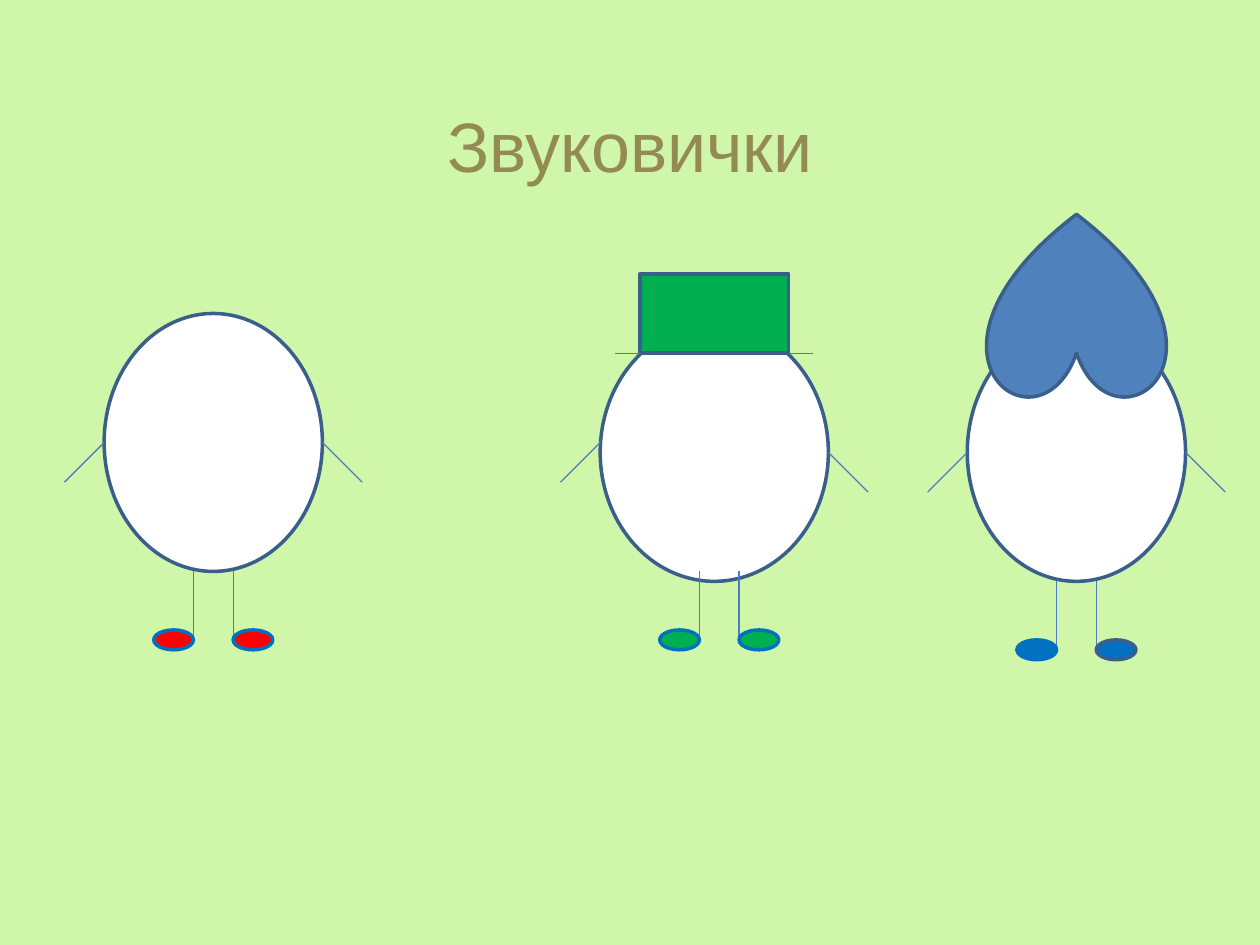
import pptx
import pptx.dml.color
import pptx.enum.shapes
import pptx.enum.text
import pptx.oxml.ns
import pptx.util
from lxml import etree
from pptx.util import Cm

SHAPE = pptx.enum.shapes.MSO_SHAPE
OUTLINE, LIMB = "3A5F8C", "4B7EBC"
WHITE, RED, GREEN, BLUE, HAT_BLUE = "FFFFFF", "FF0000", "00B050", "0070C0", "4F81BD"


def color(hex_text):
    return pptx.dml.color.RGBColor.from_string(hex_text)


def add_solid(page, kind, left, top, width, height, fill, line=OUTLINE):
    shape = page.shapes.add_shape(kind, Cm(left), Cm(top), Cm(width), Cm(height))
    shape.shadow.inherit = False
    shape.fill.solid()
    shape.fill.fore_color.rgb = color(fill)
    shape.line.color.rgb = color(line)
    shape.line.width = pptx.util.Pt(2)
    return shape


def add_limb(page, x1, y1, x2, y2):
    line = page.shapes.add_connector(
        pptx.enum.shapes.MSO_CONNECTOR.STRAIGHT, Cm(x1), Cm(y1), Cm(x2), Cm(y2))
    line.line.color.rgb = color(LIMB)
    line.line.width = pptx.util.Pt(0.75)
    etree.SubElement(line._element.spPr, pptx.oxml.ns.qn("a:effectLst"))


def add_figure(page, left, top, width, height, shoe, shoe_lines=(BLUE, BLUE),
               left_arm_rise=0, leg_rise=0, leg_shift=0):
    """Egg-shaped body with arms, legs and shoes; the box is that of the body."""
    add_solid(page, SHAPE.OVAL, left, top, width, height, WHITE)

    reach = 0.8
    shoulder = top + height / 2
    for side, x, y in ((-1, left, shoulder - left_arm_rise), (1, left + width, shoulder)):
        add_limb(page, x, y, x + side * reach, y + reach)

    shoe_width, shoe_height = 0.8, 0.4
    hip = top + height - leg_rise
    middle = left + width / 2 + leg_shift
    for side, shoe_line in zip((-1, 1), shoe_lines):
        x = middle + side * 0.4
        add_limb(page, x, hip, x, hip + 1.4)
        shoe_left = x - shoe_width if side < 0 else x
        add_solid(page, SHAPE.OVAL, shoe_left, hip + 1.18, shoe_width, shoe_height,
                  shoe, shoe_line)


def add_top_hat(page, left, top, width, height):
    add_solid(page, SHAPE.RECTANGLE, left, top, width, height, GREEN)
    brim, right, bottom = 0.5, left + width, top + height
    add_limb(page, left, bottom, left - brim, bottom)
    add_limb(page, right, bottom, right + brim, bottom)


def add_heart_hat(page, left, top, width, height):
    hat = add_solid(page, SHAPE.HEART, left, top, width, height, HAT_BLUE)
    hat.rotation = 180


def add_title(page, left, top, width, height):
    box = page.shapes.add_textbox(Cm(left), Cm(top), Cm(width), Cm(height))
    frame = box.text_frame
    frame.word_wrap = True
    frame.vertical_anchor = pptx.enum.text.MSO_ANCHOR.MIDDLE
    frame.text = "Звуковички"
    para = frame.paragraphs[0]
    para.alignment = pptx.enum.text.PP_ALIGN.CENTER
    span = para.runs[0]
    span.font.name = "Arial"
    span.font.size = pptx.util.Pt(40)
    span.font.color.rgb = color("948A54")


def main():
    deck = pptx.Presentation()
    deck.slide_width, deck.slide_height = Cm(25.4), Cm(19.05)
    page = deck.slides.add_slide(deck.slide_layouts[6])
    page.background.fill.solid()
    page.background.fill.fore_color.rgb = color("D0F7A9")

    add_figure(page, 2.1, 6.32, 4.4, 5.2, RED)
    add_figure(page, 12.1, 6.52, 4.6, 5.2, GREEN,
               left_arm_rise=0.2, leg_rise=0.2, leg_shift=0.1)
    add_figure(page, 19.5, 6.52, 4.4, 5.2, BLUE, (BLUE, OUTLINE))
    add_top_hat(page, 12.9, 5.52, 3, 1.6)
    add_heart_hat(page, 19.9, 4.32, 3.6, 3.73)
    add_title(page, 0, 1.93, 25.4, 1.96)
    deck.save("out.pptx")


if __name__ == "__main__":
    main()
